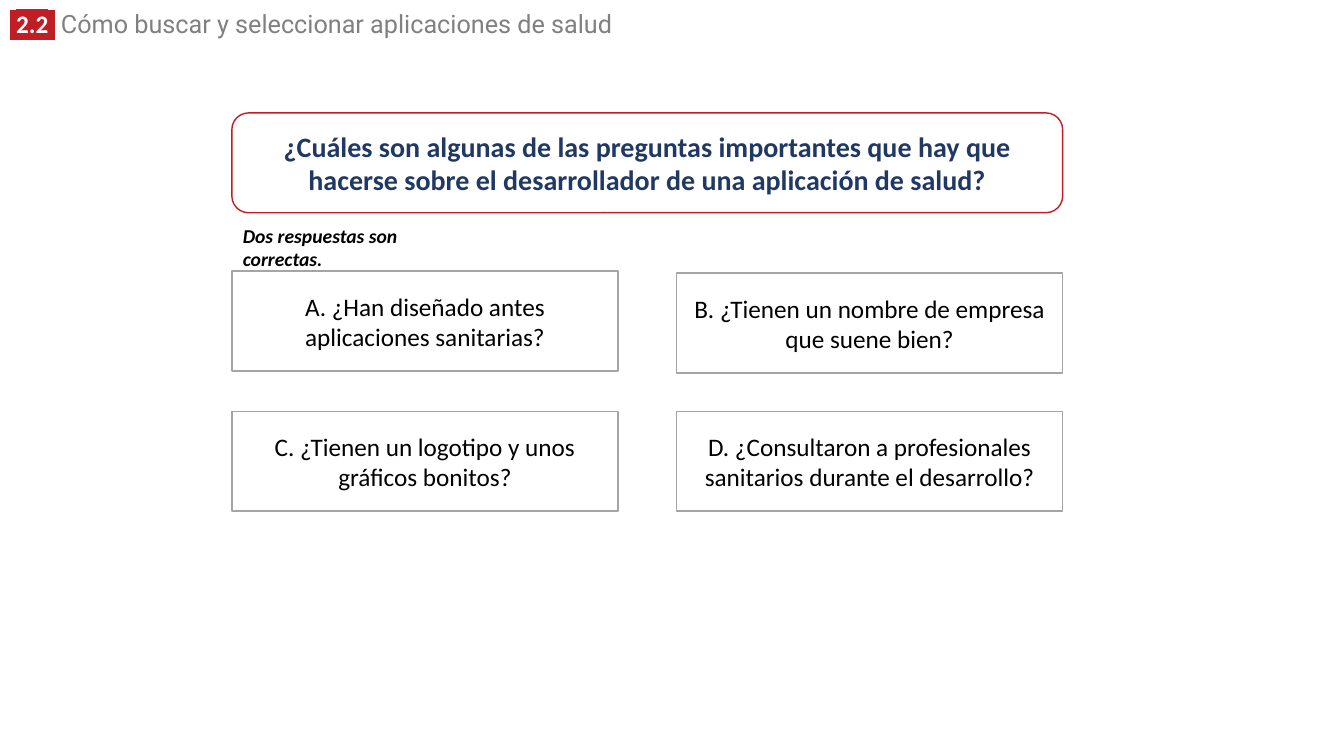
from lxml import etree
from pptx import Presentation
from pptx.dml.color import RGBColor
from pptx.enum.shapes import MSO_SHAPE as Shape
from pptx.enum.text import MSO_ANCHOR as Anchor, PP_ALIGN as Align
from pptx.oxml.ns import qn
from pptx.util import Inches, Pt

WHITE = RGBColor(0xFF, 0xFF, 0xFF)
BLACK = RGBColor(0, 0, 0)
RED = RGBColor(0xC0, 0x1E, 0x24)
NAVY = RGBColor(0x20, 0x38, 0x64)
GRAY = RGBColor(0x80, 0x80, 0x80)
SILVER = RGBColor(0xA5, 0xA5, 0xA5)

LEFT, RIGHT = 2.3, 6.71
ANSWERS = [
    ("A. ¿Han diseñado antes aplicaciones sanitarias?", LEFT, 2.69),
    ("B. ¿Tienen un nombre de empresa que suene bien?", RIGHT, 2.71),
    ("C. ¿Tienen un logotipo y unos gráficos bonitos?", LEFT, 4.08),
    ("D. ¿Consultaron a profesionales sanitarios durante el desarrollo?",
     RIGHT, 4.08),
]


def style(run, size, color, face="Calibri", bold=False, italic=False):
    font = run.font
    font.size, font.name = Pt(size), face
    font.bold, font.italic = bold, italic
    font.color.rgb = color


def mark(run, color):
    """Put a highlight behind a run whose colour is already set."""
    light = etree.Element(qn("a:highlight"))
    etree.SubElement(light, qn("a:srgbClr")).set("val", str(color))
    run.font._element.find(qn("a:solidFill")).addnext(light)


def add_text(slide, left, top, width, height):
    box = slide.shapes.add_textbox(
        Inches(left), Inches(top), Inches(width), Inches(height))
    box.text_frame.word_wrap = True
    return box.text_frame.paragraphs[0]


def add_title(slide):
    line = add_text(slide, 0, 0.09, 9.52, 0.35)
    line.line_spacing = 0.8
    for text, face in ((" ", "Roboto"), ("2.2", "Calibri"), (" ", "Roboto")):
        run = line.add_run()
        run.text = text
        style(run, 18, WHITE, face, bold=True)
        mark(run, RED)
    run = line.add_run()
    run.text = " Cómo buscar y seleccionar aplicaciones de salud"
    style(run, 18, GRAY, "Roboto")


def add_hint(slide):
    line = add_text(slide, 2.31, 2.17, 2.24, 0.34)
    line.text = "Dos respuestas son correctas."
    style(line.runs[0], 14, BLACK, bold=True, italic=True)


def add_card(slide, kind, text, left, top, width, edge, size, color,
             bold=False):
    card = slide.shapes.add_shape(
        kind, Inches(left), Inches(top), Inches(width), Inches(0.99))
    card.shadow.inherit = False
    card.fill.solid()
    card.fill.fore_color.rgb = WHITE
    card.line.color.rgb = edge
    card.line.width = Pt(1)
    frame = card.text_frame
    frame.word_wrap = True
    frame.vertical_anchor = Anchor.MIDDLE
    frame.text = text
    line = frame.paragraphs[0]
    line.alignment = Align.CENTER
    style(line.runs[0], size, color, bold=bold)


def main():
    deck = Presentation()
    deck.slide_width, deck.slide_height = Inches(13.33), Inches(7.5)
    slide = deck.slides.add_slide(deck.slide_layouts[6])
    add_title(slide)
    add_card(slide, Shape.ROUNDED_RECTANGLE,
             "¿Cuáles son algunas de las preguntas importantes que hay que "
             "hacerse sobre el desarrollador de una aplicación de salud?",
             LEFT, 1.12, 8.24, RED, 20, NAVY, bold=True)
    add_hint(slide)
    for text, left, top in ANSWERS:
        add_card(slide, Shape.RECTANGLE, text, left, top, 3.83,
                 SILVER, 18, BLACK)
    deck.save("out.pptx")


if __name__ == "__main__":
    main()
